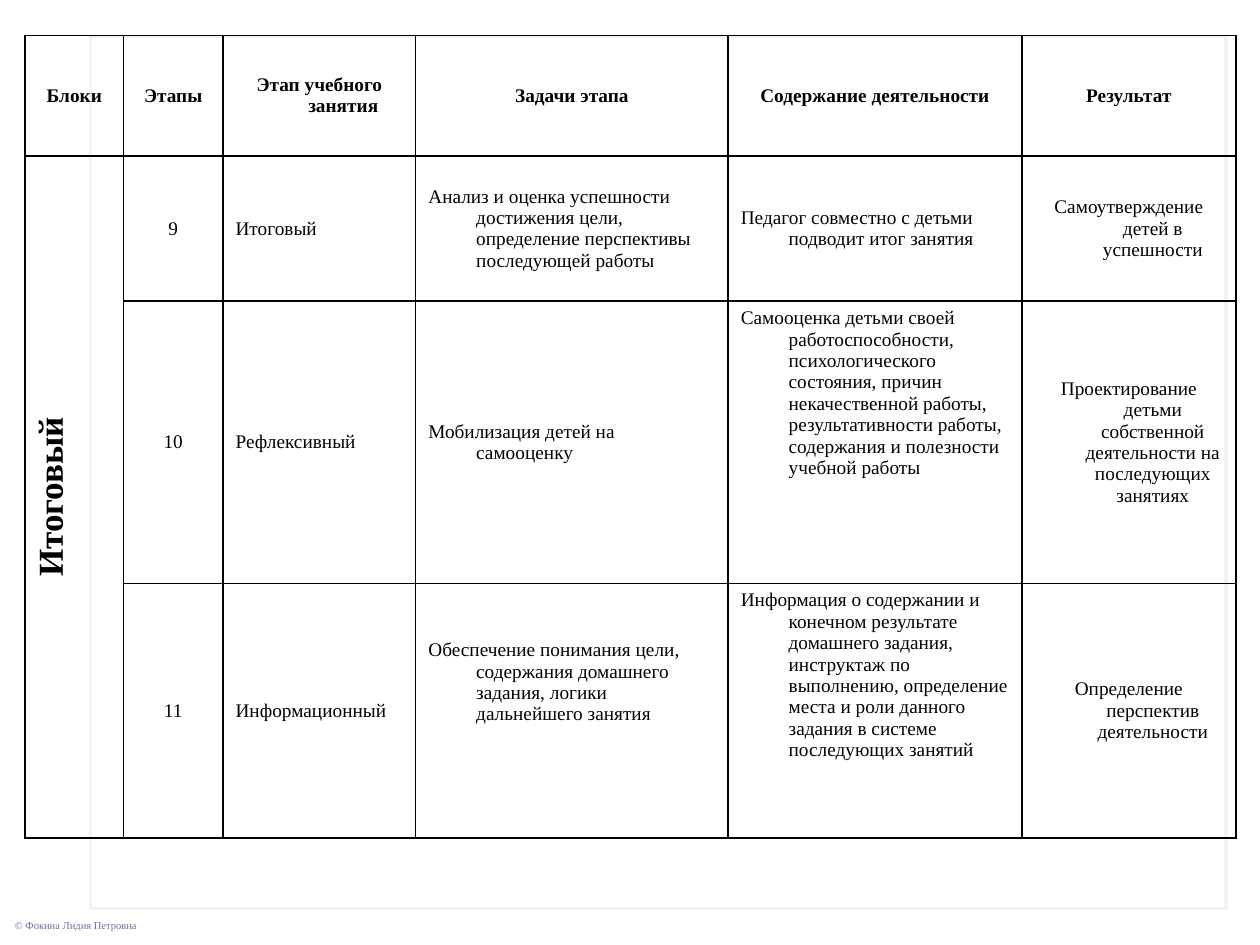
from lxml import etree
from pptx import Presentation
from pptx.dml.color import RGBColor
from pptx.enum.shapes import MSO_SHAPE
from pptx.enum.text import MSO_ANCHOR as Anchor, PP_ALIGN as Align
from pptx.oxml.ns import qn
from pptx.util import Inches, Pt

BLACK = RGBColor(0x00, 0x00, 0x00)
WHITE = RGBColor(0xFF, 0xFF, 0xFF)
FRAME_GREY = RGBColor(0xF2, 0xF2, 0xF2)
PURPLE = RGBColor(0x80, 0x64, 0xA2)
FONT = "Times New Roman"

COLUMN_WIDTHS = [0.78, 0.79, 1.53, 2.48, 2.33, 1.7]
ROW_HEIGHTS = [0.96, 1.15, 2.24, 2.02]
LEFT_COLUMNS = (2, 3, 4)
CONTENT_COLUMN = 4

ROWS = [
    ["Блоки", "Этапы", "Этап учебного занятия", "Задачи этапа",
     "Содержание деятельности", "Результат"],
    ["Итоговый", "9", "Итоговый",
     "Анализ и оценка успешности достижения цели, определение перспективы "
     "последующей работы",
     "Педагог совместно с детьми подводит итог занятия",
     "Самоутверждение детей в успешности"],
    ["", "10", "Рефлексивный", "Мобилизация детей на самооценку",
     "Самооценка детьми своей работоспособности, психологического состояния, "
     "причин некачественной работы, результативности работы, содержания и "
     "полезности учебной работы",
     "Проектирование детьми собственной деятельности на последующих занятиях"],
    ["", "11", "Информационный",
     "Обеспечение понимания цели, содержания домашнего задания, логики "
     "дальнейшего занятия",
     "Информация о содержании и конечном результате домашнего задания, "
     "инструктаж по выполнению, определение места и роли данного задания в "
     "системе последующих занятий",
     "Определение перспектив деятельности"],
]


def set_font(para, size, color, bold=False):
    font = para.font
    font.name, font.size, font.bold = FONT, Pt(size), bold
    font.color.rgb = color


def add_frame(page, left, top, width, height):
    frame = page.shapes.add_shape(MSO_SHAPE.RECTANGLE, left, top, width, height)
    frame.shadow.inherit = False
    frame.fill.solid()
    frame.fill.fore_color.rgb = WHITE
    color = frame.fill._xPr.find(qn("a:solidFill"))[0]
    etree.SubElement(color, qn("a:alpha"), val="70000")
    frame.line.color.rgb = FRAME_GREY
    frame.line.width = Pt(2)


def add_copyright(page, left, top, width, height):
    box = page.shapes.add_textbox(left, top, width, height)
    box.text_frame.word_wrap = False
    box.text_frame.vertical_anchor = Anchor.MIDDLE
    para = box.text_frame.paragraphs[0]
    para.text = "© Фокина Лидия Петровна"
    set_font(para, 6, PURPLE)


def add_borders(cell):
    props = cell._tc.get_or_add_tcPr()
    for position, side in enumerate(("lnL", "lnR", "lnT", "lnB")):
        line = etree.Element(qn(f"a:{side}"), w=str(Pt(1)))
        fill = etree.SubElement(line, qn("a:solidFill"))
        etree.SubElement(fill, qn("a:srgbClr"), val=str(BLACK))
        props.insert(position, line)


def fill_cell(cell, text, size, bold, align, anchor):
    cell.fill.background()
    add_borders(cell)
    cell.vertical_anchor = anchor
    para = cell.text_frame.paragraphs[0]
    para.text = text
    para.alignment = align
    # Hanging indent
    props = para._p.get_or_add_pPr()
    props.set("marL", str(Inches(0.38)))
    props.set("indent", str(-Inches(0.38)))
    set_font(para, size, BLACK, bold)


def add_stage_table(page, left, top, width, height):
    table = page.shapes.add_table(len(ROWS), len(COLUMN_WIDTHS),
                                  left, top, width, height).table
    table.first_row = table.horz_banding = False
    for column, size in zip(table.columns, COLUMN_WIDTHS):
        column.width = Inches(size)
    for row, size in zip(table.rows, ROW_HEIGHTS):
        row.height = Inches(size)

    for r, texts in enumerate(ROWS):
        for c, text in enumerate(texts):
            header, block = r == 0, r > 0 and c == 0
            left_aligned = not header and c in LEFT_COLUMNS
            at_top = block or (r > 1 and c == CONTENT_COLUMN)
            fill_cell(table.cell(r, c), text, 20 if block else 11,
                      header or block,
                      Align.LEFT if left_aligned else Align.CENTER,
                      Anchor.TOP if at_top else Anchor.MIDDLE)

    # Block name runs upwards over all its stages
    block_cell = table.cell(1, 0)
    block_cell.merge(table.cell(len(ROWS) - 1, 0))
    block_cell._tc.get_or_add_tcPr().set("vert", "vert270")
    # The last task sits above the middle of its cell
    table.cell(3, 3).margin_bottom = Inches(0.5)


def main():
    deck = Presentation()
    deck.slide_width, deck.slide_height = Inches(10), Inches(7.5)
    page = deck.slides.add_slide(deck.slide_layouts[6])
    add_frame(page, Inches(0.72), Inches(0.29), Inches(9.01), Inches(6.92))
    add_copyright(page, Inches(0.02), Inches(7.24), Inches(1.2), Inches(0.2))
    add_stage_table(page, Inches(0.2), Inches(0.28), Inches(9.61), Inches(6.37))
    deck.save("out.pptx")


if __name__ == "__main__":
    main()
